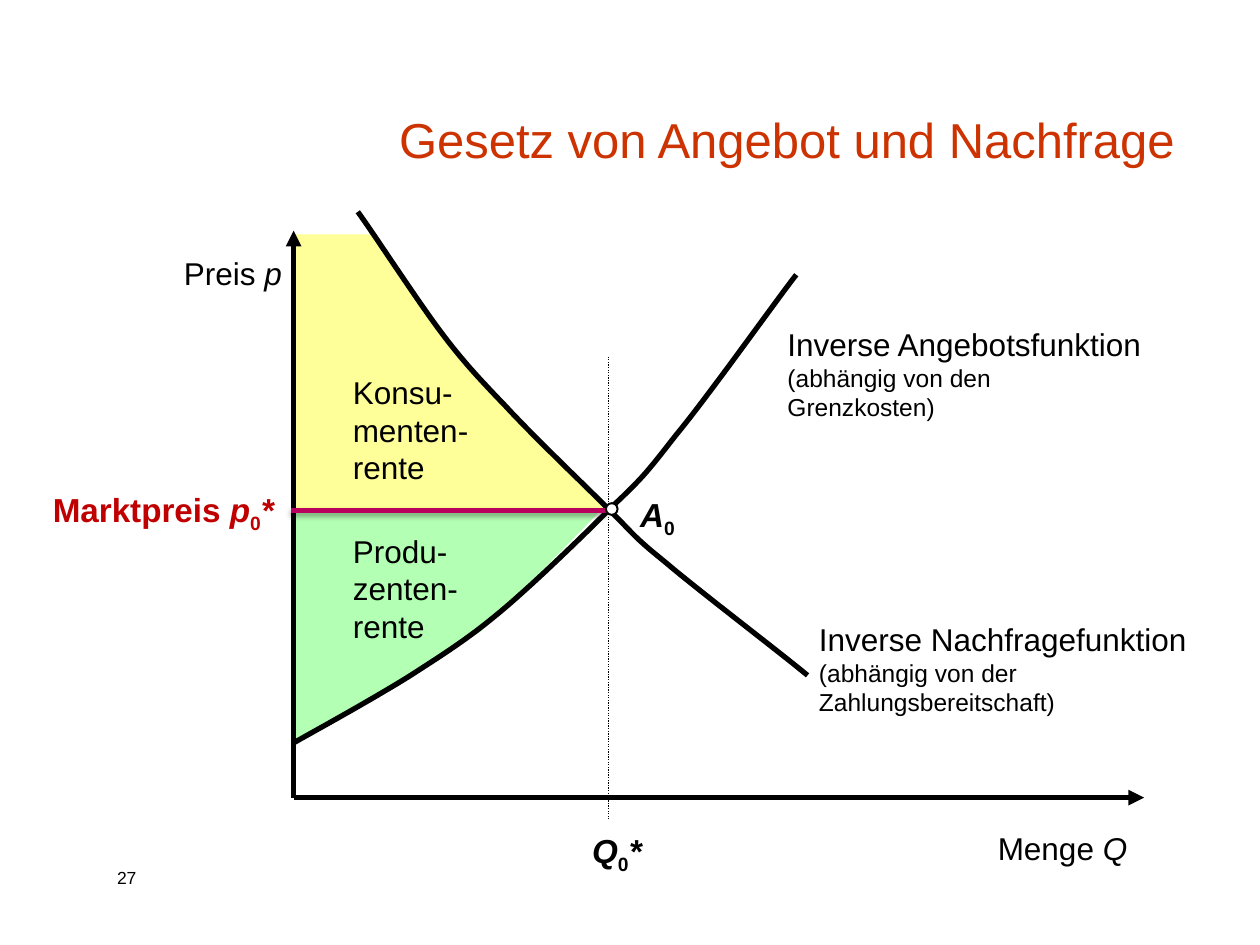
from copy import deepcopy

from lxml.etree import SubElement
from pptx import Presentation
from pptx.dml.color import RGBColor
from pptx.enum.dml import MSO_LINE
from pptx.enum.shapes import MSO_CONNECTOR, MSO_SHAPE
from pptx.enum.text import MSO_ANCHOR, MSO_AUTO_SIZE, PP_ALIGN
from pptx.oxml.ns import qn
from pptx.util import Pt

COLORS = {"text": "000000", "title": "CC3300", "price_text": "C00000", "price_line": "B9005C",
          "consumer": "FFFF99", "producer": "B3FFB3", "white": "FFFFFF"}
FONT = "Arial"
ORIGIN = (167.8, 455.8)
PRICE_Y = 291.6
SUB = {"size": 14}
ITALIC = {"italic": True}
INDEX = {"italic": False, "base": -25}


def rgb(name):
    return RGBColor.from_string(COLORS[name])


def add_text(p, text, size=18, color="text", bold=False, italic=False, base=0):
    """Append text to a paragraph; each newline becomes a line break of the same format."""
    for i, line in enumerate(text.split("\n")):
        if i:
            p.add_line_break()
            br = p._p[-1]
        r = p.add_run()
        r.text = line
        f = r.font
        f.name, f.size, f.bold, f.italic = FONT, Pt(size), bold, italic
        f.color.rgb = rgb(color)
        if base:
            r._r.get_or_add_rPr().set("baseline", str(base * 1000))
        if i:
            br.append(deepcopy(r._r.get_or_add_rPr()))


def bezier_points(start, segments, steps=16):
    """Sample a chain of cubic Bézier segments, each (control, control, end)."""
    points = [start]
    for c1, c2, end in segments:
        p0 = points[-1]
        for i in range(1, steps + 1):
            t = i / steps
            u = 1 - t
            points.append(tuple(u**3 * a + 3 * u * u * t * b + 3 * u * t * t * c + t**3 * d
                                for a, b, c, d in zip(p0, c1, c2, end)))
    return points


class SlideBuilder:
    def __init__(self, s):
        self.s = s

    def title(self, text, x, y, w, h):
        sp = self.s.shapes.title
        sp.left, sp.top, sp.width, sp.height = Pt(x), Pt(y), Pt(w), Pt(h)
        tf = sp.text_frame
        tf.auto_size = MSO_AUTO_SIZE.NONE
        tf.vertical_anchor = MSO_ANCHOR.BOTTOM
        p = tf.paragraphs[0]
        p.alignment = PP_ALIGN.RIGHT
        add_text(p, text, size=28, color="title")

    def label(self, x, y, w, h, *runs, wrap=False, inset=0, **style):
        """Text box; each run is (text, format changes) on top of the common style."""
        tf = self.s.shapes.add_textbox(Pt(x), Pt(y), Pt(w), Pt(h)).text_frame
        tf.word_wrap = wrap
        tf.auto_size = MSO_AUTO_SIZE.SHAPE_TO_FIT_TEXT
        tf.margin_left = tf.margin_right = Pt(inset)
        tf.margin_top = tf.margin_bottom = Pt(inset / 2)
        for text, changes in runs:
            add_text(tf.paragraphs[0], text, **{**style, **changes})

    def paint(self, sp, fill=None, width=None):
        sp.shadow.inherit = False
        if fill:
            sp.fill.solid()
            sp.fill.fore_color.rgb = rgb(fill)
        else:
            sp.fill.background()
        if width:
            sp.line.color.rgb = rgb("text")
            sp.line.width = Pt(width)
        else:
            sp.line.fill.background()

    def outline(self, points, close=False, **look):
        pts = [(Pt(x), Pt(y)) for x, y in points]
        fb = self.s.shapes.build_freeform(*pts[0])
        fb.add_line_segments(pts[1:], close=close)
        self.paint(fb.convert_to_shape(), **look)

    def dot(self, x, y, d):
        sp = self.s.shapes.add_shape(MSO_SHAPE.OVAL, Pt(x - d / 2), Pt(y - d / 2), Pt(d), Pt(d))
        self.paint(sp, fill="white", width=1.13)

    def line(self, start, end, color="text", width=3, arrow=False, dash=None, shadow=False):
        sp = self.s.shapes.add_connector(MSO_CONNECTOR.STRAIGHT, *map(Pt, start + end))
        sp.line.color.rgb = rgb(color)
        sp.line.width = Pt(width)
        if dash:
            sp.line.dash_style = dash
        if arrow:
            SubElement(sp.line._get_or_add_ln(), qn("a:tailEnd"), type="triangle")
        effects = SubElement(sp._element.spPr, qn("a:effectLst"))
        if shadow:
            shade = SubElement(effects, qn("a:outerShdw"), blurRad=str(Pt(3.1)),
                               dist=str(Pt(1.8)), dir="5400000", rotWithShape="0")
            clr = SubElement(shade, qn("a:srgbClr"), val=COLORS["text"])
            SubElement(clr, qn("a:alpha"), val="35000")


def main():
    prs = Presentation()
    prs.slide_width, prs.slide_height = Pt(720), Pt(540)
    b = SlideBuilder(prs.slides.add_slide(prs.slide_layouts[5]))

    demand = bezier_points((204.5, 121), [
        ((212.4, 131.8), (235.4, 167), (249.1, 185.8)),
        ((262.8, 204.5), (272.2, 214.6), (288.7, 231.8)),
        ((305.3, 249.8), (333.4, 276.5), (348.5, 291.6)),
        ((363.6, 306.7), (362.2, 306.7), (380.9, 321.8)),
        ((399.6, 337.7), (445, 372.2), (461.5, 385.9))])
    supply = bezier_points((168.5, 424.1), [
        ((180, 417.6), (216.7, 397.4), (236.9, 384.5)),
        ((257, 371.5), (269.3, 363.6), (288, 347.8)),
        ((306.7, 331.9), (333.4, 306), (349.9, 289.4)),
        ((366.5, 273.6), (368.6, 271.4), (385.9, 249.1)),
        ((403.9, 227.5), (440.6, 175.7), (455, 157))])

    b.title("Gesetz von Angebot und Nachfrage", 150.5, 30.2, 527.8, 69.8)

    b.outline([(167, 292.3), (348.5, 292.3), (275, 218.9), (212.4, 133.9), (167, 133.9)],
              close=True, fill="consumer")
    b.outline([(167, 292.3), (342.7, 292.3), (308.9, 326.9), (275, 360.7), (212.4, 400.3),
               (167, 423.4)], close=True, fill="producer")
    for text, y in (("Konsu-menten-rente", 213.1), ("Produ-zenten-rente", 303.8)):
        b.label(201.6, y, 73.4, 64.8, (text, {}), wrap=True)

    b.outline(demand, width=3)
    b.line(ORIGIN, (653.8, ORIGIN[1]), arrow=True)
    b.line(ORIGIN, (ORIGIN[0], 131.8), arrow=True)
    b.outline(supply, width=3)
    b.line((347.8, 203.8), (347.8, 468), width=0.75, dash=MSO_LINE.ROUND_DOT)
    b.line((346.3, PRICE_Y), (166.3, PRICE_Y), color="price_line", shadow=True)
    b.dot(349.6, 290.9, 6.7)

    b.label(105.1, 145.4, 61.2, 21.6, ("Preis ", {}), ("p", ITALIC), wrap=True)
    b.label(570.2, 473.8, 74.2, 21.6, ("Menge ", {}), ("Q", ITALIC))
    b.label(450, 185.8, 203.8, 55.4, ("Inverse Angebotsfunktion\n", {}),
            ("(abhängig von den\nGrenzkosten)", SUB))
    b.label(468, 354.2, 211.7, 55.4, ("Inverse Nachfragefunktion\n", {}),
            ("(abhängig von der\nZahlungsbereitschaft)", SUB))

    key = {"size": 19, "bold": True}
    b.label(338.4, 474.5, 29.5, 23, ("Q", ITALIC), ("0", INDEX), ("*", ITALIC), **key)
    b.label(30.2, 279.4, 128.9, 23, ("Marktpreis", {}), (" p", ITALIC), ("0", INDEX),
            ("*", ITALIC), color="price_text", **key)
    b.label(365.8, 282.2, 20.9, 23, ("A", ITALIC), ("0", INDEX), **key)
    b.label(59.8, 491.8, 48.2, 19.4, ("27", {}), wrap=True, inset=7.2, size=10)

    prs.save("out.pptx")


if __name__ == "__main__":
    main()
